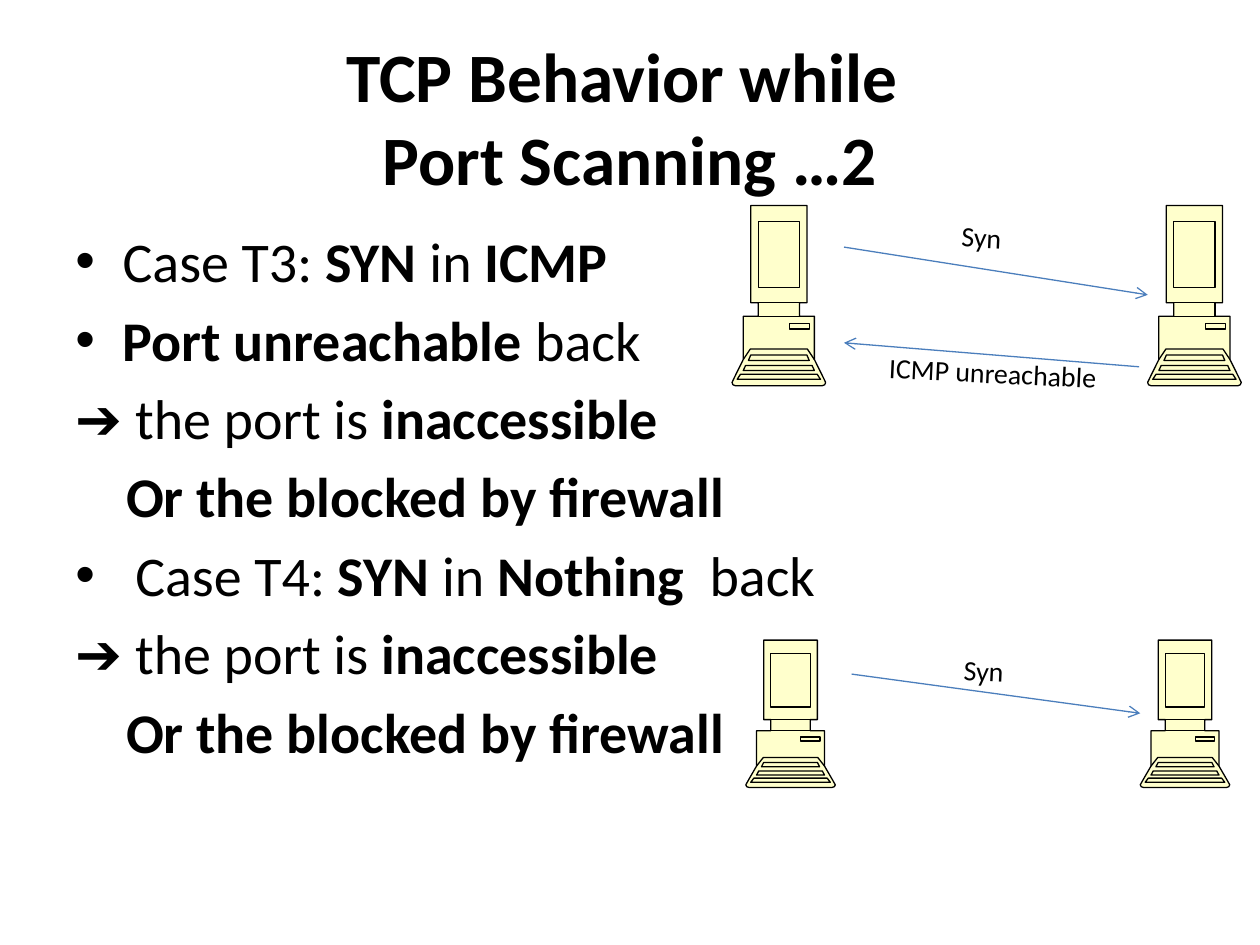
import copy
import dataclasses
import pptx
import pptx.dml.color
import pptx.enum.shapes
import pptx.enum.text
import pptx.oxml
import pptx.oxml.ns
import pptx.util

Pt = pptx.util.Pt
qn = pptx.oxml.ns.qn


def rgb(code):
    """Return the colour for a hex code."""
    return pptx.dml.color.RGBColor.from_string(code)


@dataclasses.dataclass(frozen=True)
class Theme:
    """Colours, font and type sizes of the deck."""
    font: str = "Calibri"
    ink: str = "000000"
    paper: str = "FFFFFF"
    computer: str = "FFFFCC"
    arrow: str = "4B7EBC"
    title: float = 39.6
    body: float = 32
    label: float = 16
    thin: float = 0.5
    line: float = 0.75
    tilt: float = 2.8


@dataclasses.dataclass(frozen=True)
class Box:
    """A rectangle in points."""
    left: float
    top: float
    width: float
    height: float

    def inside(self, part):
        """Move a part given relative to this box onto the page."""
        return Box(self.left + part.left, self.top + part.top, part.width, part.height)

    def lengths(self):
        """Return left, top, width and height as lengths."""
        return [Pt(value) for value in dataclasses.astuple(self)]


@dataclasses.dataclass(frozen=True)
class Message:
    """A labelled arrow, relative to its exchange."""
    text: str
    label: Box
    start: tuple
    end: tuple


THEME = Theme()
INACCESSIBLE = ("plain", [("➔ the port is ", False), ("inaccessible", True)])
FIREWALL = ("indented", [("Or the blocked by firewall", True)])
BODY = [
    ("bullet", [("Case T3: ", False), ("SYN", True), (" in ", False), ("ICMP", True)]),
    ("bullet", [("Port unreachable ", True), ("back", False)]),
    INACCESSIBLE,
    FIREWALL,
    ("bullet", [(" Case T4: ", False), ("SYN ", True), ("in ", False),
                ("Nothing ", True), (" back", False)]),
    INACCESSIBLE,
    FIREWALL,
]
INDENTS = {"bullet": (27, -27), "plain": (0, 0), "indented": (29, 0)}
REFUSED = [
    Message("Syn", Box(123.8, 2.9, 77, 43.2), (64, 23.8), (237.6, 51.1)),
    Message("ICMP unreachable", Box(82.1, 80.6, 180, 52.6), (232.6, 92.2), (64, 78.5)),
]
UNANSWERED = [Message("Syn", Box(117.4, 2.2, 73.4, 35.3), (60.5, 19.4), (225.4, 41.8))]


def add_span(para, text, size, bold=False):
    """Add one run of text."""
    span = para.add_run()
    span.text = text
    span.font.name, span.font.size, span.font.bold = THEME.font, Pt(size), bold
    span.font.color.rgb = rgb(THEME.ink)


def add_title(page, box):
    """Place the two-line title."""
    frame = page.shapes.add_textbox(*box.lengths()).text_frame
    frame.word_wrap = True
    frame.vertical_anchor = pptx.enum.text.MSO_ANCHOR.MIDDLE
    para = frame.paragraphs[0]
    para.alignment = pptx.enum.text.PP_ALIGN.CENTER
    add_span(para, "TCP Behavior while ", THEME.title, True)
    para.add_line_break()
    add_span(para, "Port Scanning …2", THEME.title, True)


def add_body(page, box):
    """Place the bulleted cases."""
    frame = page.shapes.add_textbox(*box.lengths()).text_frame
    frame.word_wrap = True
    for index, (kind, spans) in enumerate(BODY):
        para = frame.add_paragraph() if index else frame.paragraphs[0]
        para.space_before = Pt(6.4)
        margin, indent = INDENTS[kind]
        properties = para._p.get_or_add_pPr()
        properties.set("marL", str(Pt(margin)))
        properties.set("indent", str(Pt(indent)))
        if kind == "bullet":
            font = properties.makeelement(qn("a:buFont"), {"typeface": "Arial"})
            bullet = properties.makeelement(qn("a:buChar"), {"char": "•"})
            properties.extend([font, bullet])
        for text, bold in spans:
            add_span(para, text, THEME.body, bold)


def trapezoid(upper, top, lower, bottom):
    """Return a closed outline symmetric about the middle of 1000 units."""
    return [(upper, top), (1000 - upper, top), (1000 - lower, bottom),
            (lower, bottom), (upper, top)]


def computer_outlines():
    """Return the silhouette and the detail lines in thousandths of the box."""
    half = [(200, 0), (200, 540), (280, 540), (280, 615), (120, 615), (120, 855),
            (35, 944), (0, 982), (10, 995), (35, 1000)]
    silhouette = half + [(1000 - x, y) for x, y in reversed(half)] + half[:1]
    details = [
        trapezoid(200, 830, 175, 860),
        trapezoid(145, 888, 120, 916),
        trapezoid(90, 937, 55, 965),
        [(880, 855), (805, 797), (195, 797), (120, 855)],
        [(615, 657), (615, 685), (830, 685), (830, 657), (615, 657)],
        trapezoid(280, 91, 280, 455),
        trapezoid(280, 540, 280, 615),
    ]
    return [silhouette] + details


def add_computer(page, box):
    """Draw a computer with a filled silhouette and unfilled details."""
    left, top, width, height = box.lengths()
    outlines = computer_outlines()
    builder = page.shapes.build_freeform(*outlines[0][0], scale=(width / 1000, height / 1000))
    builder.add_line_segments(outlines[0][1:], close=False)
    for outline in outlines[1:]:
        builder.move_to(*outline[0])
        builder.add_line_segments(outline[1:], close=False)
    shape = builder.convert_to_shape(left, top)
    shape.shadow.inherit = False
    shape.fill.solid()
    shape.fill.fore_color.rgb = rgb(THEME.computer)
    shape.line.color.rgb = rgb(THEME.ink)
    shape.line.width = Pt(THEME.line)
    body = next(shape._element.iter(qn("a:path")))
    details = copy.deepcopy(body)
    details.set("fill", "none")
    body.addnext(details)
    split = len(outlines[0])
    for segment in list(body)[split:]:
        body.remove(segment)
    for segment in list(details)[:split]:
        details.remove(segment)


def add_label(page, text, box):
    """Place a slightly turned message label."""
    shape = page.shapes.add_shape(pptx.enum.shapes.MSO_SHAPE.RECTANGLE, *box.lengths())
    shape.rotation = THEME.tilt
    shape.shadow.inherit = False
    shape.fill.solid()
    shape.fill.fore_color.rgb = rgb(THEME.paper)
    shape.line.color.rgb = rgb(THEME.paper)
    shape.line.width = Pt(THEME.thin)
    frame = shape.text_frame
    frame.word_wrap = True
    frame.vertical_anchor = pptx.enum.text.MSO_ANCHOR.TOP
    para = frame.paragraphs[0]
    para.alignment = pptx.enum.text.PP_ALIGN.LEFT
    para.line_spacing, para.space_after = 1.15, Pt(10)
    add_span(para, text, THEME.label)


def add_arrow(page, box, start, end):
    """Draw an arrow between two points relative to the box."""
    points = [Pt(value) for x, y in (start, end) for value in (box.left + x, box.top + y)]
    arrow = page.shapes.add_connector(pptx.enum.shapes.MSO_CONNECTOR.STRAIGHT, *points)
    arrow.line.color.rgb = rgb(THEME.arrow)
    arrow.line.width = Pt(THEME.line)
    line = arrow.line._get_or_add_ln()
    line.append(line.makeelement(qn("a:tailEnd"), {"type": "arrow"}))
    line.addnext(line.makeelement(qn("a:effectLst"), {}))


def add_exchange(page, box, computer_width, messages):
    """Draw two computers at the sides of the box and the messages between them."""
    sender = Box(0, 0, computer_width, box.height)
    receiver = dataclasses.replace(sender, left=box.width - computer_width)
    add_computer(page, box.inside(sender))
    for message in messages:
        add_label(page, message.text, box.inside(message.label))
    for message in messages:
        add_arrow(page, box, message.start, message.end)
    add_computer(page, box.inside(receiver))


def main():
    """Build and save the deck."""
    deck = pptx.Presentation()
    deck.slide_width, deck.slide_height = Pt(720), Pt(540)
    page = deck.slides.add_slide(deck.slide_layouts[6])
    add_title(page, Box(36, 21.6, 648, 90))
    add_body(page, Box(36, 126, 648, 356.4))
    add_exchange(page, Box(418.3, 117.4, 291, 103), 53.5, REFUSED)
    add_exchange(page, Box(426.2, 365.8, 276.5, 84.2), 51.1, UNANSWERED)
    deck.save("out.pptx")


if __name__ == "__main__":
    main()
